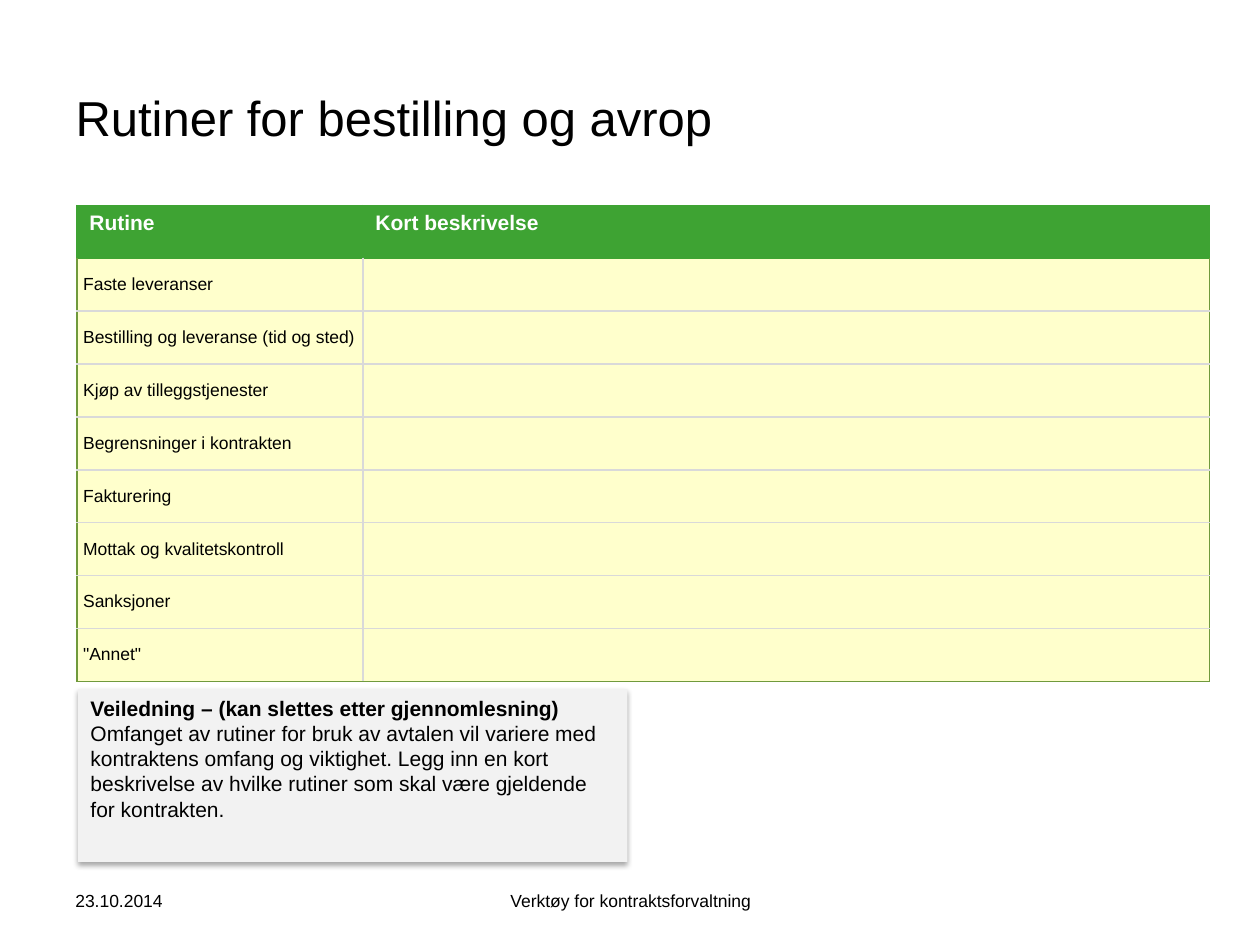
from lxml import etree
from pptx import Presentation
from pptx.dml.color import RGBColor
from pptx.enum.shapes import MSO_SHAPE as Shape
from pptx.enum.text import MSO_ANCHOR as Anchor, PP_ALIGN as Align
from pptx.oxml.ns import qn
from pptx.util import Inches, Pt

BLACK = RGBColor(0x00, 0x00, 0x00)
WHITE = RGBColor(0xFF, 0xFF, 0xFF)
GREEN = RGBColor(0x3E, 0xA3, 0x33)
EDGE = RGBColor(0x70, 0x9A, 0x3C)
GRID = RGBColor(0xD9, 0xD9, 0xD9)
CREAM = RGBColor(0xFF, 0xFF, 0xCC)
PALE_GREY = RGBColor(0xF2, 0xF2, 0xF2)

HEADERS = ["Rutine", "Kort beskrivelse"]
ROUTINES = [
    "Faste leveranser",
    "Bestilling og leveranse (tid og sted)",
    "Kjøp av tilleggstjenester",
    "Begrensninger i kontrakten",
    "Fakturering",
    "Mottak og kvalitetskontroll",
    "Sanksjoner",
    '"Annet"',
]
GUIDE_HEADING = "Veiledning – (kan slettes etter gjennomlesning)"
GUIDE_TEXT = (
    "Omfanget av rutiner for bruk av avtalen vil variere med kontraktens "
    "omfang og viktighet. Legg inn en kort beskrivelse av hvilke rutiner "
    "som skal være gjeldende for kontrakten."
)


class SlideBuilder:
    font_name = "Arial"

    def __init__(self, slide):
        self.slide = slide

    def style(self, paragraph, size, color=BLACK, bold=False, align=Align.LEFT):
        paragraph.alignment = align
        font = paragraph.font
        font.name, font.size, font.bold = self.font_name, Pt(size), bold
        font.color.rgb = color

    def title(self, text, left, top, width, height):
        title = self.slide.shapes.title
        title.left, title.top = Inches(left), Inches(top)
        title.width, title.height = Inches(width), Inches(height)
        title.text_frame.text = text
        title.text_frame.vertical_anchor = Anchor.MIDDLE
        self.style(title.text_frame.paragraphs[0], 28)

    def label(self, text, left, top, width, height, align=Align.LEFT):
        box = self.slide.shapes.add_textbox(
            Inches(left), Inches(top), Inches(width), Inches(height))
        frame = box.text_frame
        frame.word_wrap = True
        frame.vertical_anchor = Anchor.MIDDLE
        frame.text = text
        self.style(frame.paragraphs[0], 10, align=align)

    def borders(self, cell, **sides):
        properties = cell._tc.get_or_add_tcPr()
        for side in "LRTB":
            color, width = sides[side]
            line = etree.SubElement(
                properties, qn(f"a:ln{side}"), w=str(Pt(width)))
            fill = etree.SubElement(line, qn("a:solidFill"))
            etree.SubElement(fill, qn("a:srgbClr"), val=str(color))

    def table(self, headers, routines, left, top, widths, row_height):
        rows = [headers] + [[routine, ""] for routine in routines]
        last_row, last_column = len(rows) - 1, len(widths) - 1
        table = self.slide.shapes.add_table(
            len(rows), len(widths), Inches(left), Inches(top),
            Inches(sum(widths)), Inches(row_height * len(rows))).table
        for column, width in zip(table.columns, widths):
            column.width = Inches(width)
        header_line, edge, grid = (GREEN, 0.75), (EDGE, 1), (GRID, 1)
        for r, texts in enumerate(rows):
            table.rows[r].height = Inches(row_height)
            for c, text in enumerate(texts):
                cell = table.cell(r, c)
                cell.text = text
                paragraph = cell.text_frame.paragraphs[0]
                if r == 0:
                    self.borders(cell, **dict.fromkeys("LRTB", header_line))
                    self.style(paragraph, 12, WHITE, bold=True)
                else:
                    self.borders(
                        cell,
                        L=edge if c == 0 else grid,
                        R=edge if c == last_column else grid,
                        T=header_line if r == 1 else grid,
                        B=edge if r == last_row else grid)
                    self.style(paragraph, 10)
                    cell.vertical_anchor = Anchor.MIDDLE
                    cell.margin_left = cell.margin_right = Inches(0.05)
                    cell.margin_top = cell.margin_bottom = 0
                cell.fill.solid()
                cell.fill.fore_color.rgb = GREEN if r == 0 else CREAM

    def shadow(self, shape):
        shape.shadow.inherit = False
        effects = shape._element.spPr.find(qn("a:effectLst"))
        shadow = etree.SubElement(
            effects, qn("a:outerShdw"), blurRad=str(Pt(3.1)),
            dist=str(Pt(1.8)), dir="5400000", rotWithShape="0")
        color = etree.SubElement(shadow, qn("a:srgbClr"), val=str(BLACK))
        etree.SubElement(color, qn("a:alpha"), val="35000")

    def note(self, heading, text, left, top, width, height):
        box = self.slide.shapes.add_shape(
            Shape.RECTANGLE, Inches(left), Inches(top),
            Inches(width), Inches(height))
        box.fill.solid()
        box.fill.fore_color.rgb = PALE_GREY
        box.line.fill.background()
        self.shadow(box)
        frame = box.text_frame
        frame.word_wrap = True
        frame.vertical_anchor = Anchor.TOP
        frame.text = f"{heading}\n{text}"
        for paragraph, bold in zip(frame.paragraphs, (True, False)):
            self.style(paragraph, 12, bold=bold)


def main():
    presentation = Presentation()
    presentation.slide_width = Inches(10)
    presentation.slide_height = Inches(7.5)
    title_only = presentation.slide_layouts[5]
    builder = SlideBuilder(presentation.slides.add_slide(title_only))

    # Title and table of routines
    builder.title("Rutiner for bestilling og avrop", 0.5, 0.3, 9, 1.25)
    builder.table(HEADERS, ROUTINES, 0.61, 1.63, (2.27, 6.72), 0.42)

    # Date and footer
    builder.label("23.10.2014", 0.5, 6.95, 2.33, 0.4)
    builder.label("Verktøy for kontraktsforvaltning",
                  3.42, 6.95, 3.17, 0.4, Align.CENTER)

    # Guidance note
    builder.note(GUIDE_HEADING, GUIDE_TEXT, 0.62, 5.47, 4.36, 1.37)

    presentation.save("out.pptx")


if __name__ == "__main__":
    main()
